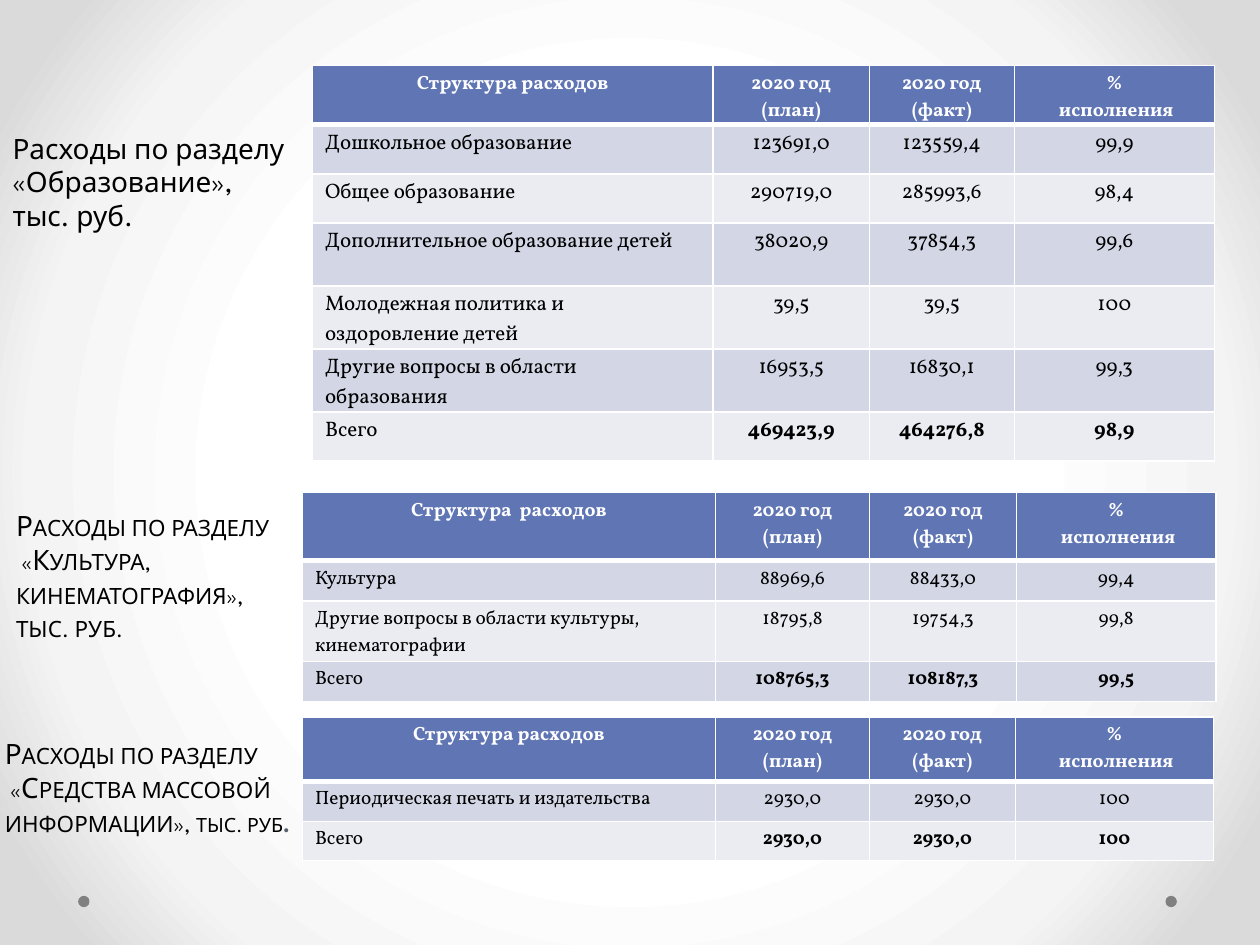
from lxml.etree import SubElement
from pptx import Presentation
from pptx.dml.color import RGBColor
from pptx.enum.shapes import MSO_SHAPE
from pptx.enum.text import MSO_ANCHOR, MSO_AUTO_SIZE, PP_ALIGN
from pptx.oxml import parse_xml
from pptx.oxml.ns import nsdecls, qn
from pptx.util import Inches, Pt

COLUMNS, ROWS = 100, 75
WHITE, BLACK, GRAY, SLATE = "FFFFFF", "000000", "808080", "575F6D"
HEADER, BANDS = "6076B4", ("D2D6E5", "EAECF2")
BACKDROP = ((50, WHITE), (76, "F4F4F4"), (92, "DADADA"))
PERIOD_HEADINGS = ["2020 год (план)", "2020 год (факт)", "%\n исполнения"]

EDUCATION = [
    ["Структура расходов", *PERIOD_HEADINGS],
    ["Дошкольное образование", "123691,0", "123559,4", "99,9"],
    ["Общее образование", "290719,0", "285993,6", "98,4"],
    ["Дополнительное образование детей", "38020,9", "37854,3", "99,6"],
    ["Молодежная политика и оздоровление детей", "39,5", "39,5", "100"],
    ["Другие вопросы в области образования", "16953,5", "16830,1", "99,3"],
    ["Всего", "469423,9", "464276,8", "98,9"],
]
CULTURE = [
    ["Структура  расходов", *PERIOD_HEADINGS],
    ["Культура", "88969,6", "88433,0", "99,4"],
    ["Другие вопросы в области культуры, кинематографии", "18795,8", "19754,3", "99,8"],
    ["Всего", "108765,3", "108187,3", "99,5"],
]
MEDIA = [
    ["Структура расходов", *PERIOD_HEADINGS],
    ["Периодическая печать и издательства", "2930,0", "2930,0", "100"],
    ["Всего", "2930,0", "2930,0", "100"],
]


def color(value):
    return RGBColor.from_string(value)


class SlideBuilder:
    heading_font, table_font = "League Spartan", "Vollkorn"
    heading_size, header_size = 16, 11

    def __init__(self, presentation):
        self.slide = presentation.slides.add_slide(presentation.slide_layouts[5])
        self.column = presentation.slide_width / COLUMNS
        self.row = presentation.slide_height / ROWS

    def place(self, left, top, width, height):
        return (round(left * self.column), round(top * self.row),
                round(width * self.column), round(height * self.row))

    def format_run(self, run, font, size, fill, bold=False):
        run.font.name = font
        run.font.size = Pt(size)
        run.font.color.rgb = color(fill)
        run.font.bold = bold

    def background(self, stops):
        stop_list = "".join(
            f'<a:gs pos="{position * 1000}"><a:srgbClr val="{fill}"/></a:gs>'
            for position, fill in stops)
        background = parse_xml(
            f'<p:bg {nsdecls("p", "a")}><p:bgPr><a:gradFill rotWithShape="1">'
            f'<a:gsLst>{stop_list}</a:gsLst><a:path path="circle">'
            '<a:fillToRect l="50000" t="50000" r="50000" b="50000"/></a:path>'
            '</a:gradFill><a:effectLst/></p:bgPr></p:bg>')
        self.slide.element.cSld.insert(0, background)

    def dot(self, left, top, diameter):
        shape = self.slide.shapes.add_shape(
            MSO_SHAPE.OVAL, *self.place(left, top, diameter, diameter))
        shape.shadow.inherit = False
        shape.fill.solid()
        shape.fill.fore_color.rgb = color(GRAY)
        shape.line.fill.background()

    def title(self, area, text):
        shape = self.slide.shapes.title
        shape.left, shape.top, shape.width, shape.height = self.place(*area)
        return self.fill_heading(shape, text)

    def heading(self, area, text):
        shape = self.slide.shapes.add_textbox(*self.place(*area))
        return self.fill_heading(shape, text, small_caps=True)

    def fill_heading(self, shape, text, small_caps=False):
        frame = shape.text_frame
        frame.text = text
        frame.word_wrap = True
        frame.auto_size = MSO_AUTO_SIZE.SHAPE_TO_FIT_TEXT
        frame.vertical_anchor = MSO_ANCHOR.TOP
        for paragraph in frame.paragraphs:
            paragraph.alignment = PP_ALIGN.LEFT
            for run in paragraph.runs:
                self.format_run(run, self.heading_font, self.heading_size, BLACK)
                if small_caps:
                    run.font._element.set("cap", "small")
        return frame

    def append_run(self, paragraph, text, size, fill, bold=False):
        run = paragraph.add_run()
        run.text = text
        self.format_run(run, self.heading_font, size, fill, bold)
        run.font._element.set("cap", "small")

    def borders(self, cell, top=1, bottom=1):
        properties = cell._tc.get_or_add_tcPr()
        for side, width in (("L", 1), ("R", 1), ("T", top), ("B", bottom)):
            line = SubElement(properties, qn(f"a:ln{side}"), w=str(Pt(width)))
            fill = SubElement(line, qn("a:solidFill"))
            SubElement(fill, qn("a:srgbClr"), val=WHITE)

    def table(self, left, top, widths, heights, content, body_size):
        area = self.place(left, top, sum(widths), sum(heights))
        table = self.slide.shapes.add_table(len(heights), len(widths), *area).table
        for column, width in zip(table.columns, widths):
            column.width = round(width * self.column)
        for row, height in zip(table.rows, heights):
            row.height = round(height * self.row)
        for row_index, values in enumerate(content):
            for column_index, value in enumerate(values):
                self.cell(table.cell(row_index, column_index), value, row_index,
                          column_index, row_index == len(content) - 1, body_size)

    def cell(self, cell, text, row, column, is_total, body_size):
        is_header = row == 0
        self.borders(cell, 3 if row == 1 else 1, 3 if is_header else 1)
        cell.fill.solid()
        cell.fill.fore_color.rgb = color(HEADER if is_header else BANDS[(row - 1) % 2])
        cell.margin_top, cell.margin_bottom = Inches(0.04), 0
        cell.text_frame.text = text
        for paragraph in cell.text_frame.paragraphs:
            paragraph.alignment = PP_ALIGN.CENTER if is_header or column else PP_ALIGN.LEFT
            for run in paragraph.runs:
                self.format_run(run, self.table_font,
                                self.header_size if is_header else body_size,
                                WHITE if is_header else BLACK,
                                is_header or (is_total and column > 0))


def main():
    presentation = Presentation()
    presentation.slide_width, presentation.slide_height = Inches(10), Inches(7.5)
    builder = SlideBuilder(presentation)
    builder.background(BACKDROP)
    for left in (92.5, 6.2):
        builder.dot(left, 71.1, 0.9)

    builder.title((0, 9.9, 32.7, 9.1), "Расходы по разделу\n«Образование»,\nтыс. руб.")
    builder.table(24.8, 5.2, (31.8, 12.4, 11.5, 15.9),
                  (4.7, 3.9, 3.9, 5, 5, 5, 3.9), EDUCATION, 12)

    builder.heading((0.3, 39.9, 24, 11.8),
                    "Расходы по разделу\n «Культура, кинематография», \vтыс. руб.")
    builder.table(24, 39.1, (32.8, 12.2, 11.7, 15.8),
                  (5.4, 3.2, 4.8, 3.2), CULTURE, 11)

    media_frame = builder.heading(
        (-0.6, 58, 50, 9.1), "Расходы по разделу\n «Средства массовой\nинформации», ")
    last_line = media_frame.paragraphs[-1]
    builder.append_run(last_line, "тыс. руб", 14, BLACK)
    builder.append_run(last_line, ".", 16, SLATE, bold=True)
    builder.table(24, 56.9, (32.8, 12.2, 11.6, 15.7), (5.1, 3.2, 3.1), MEDIA, 11)

    presentation.save("out.pptx")


if __name__ == "__main__":
    main()
